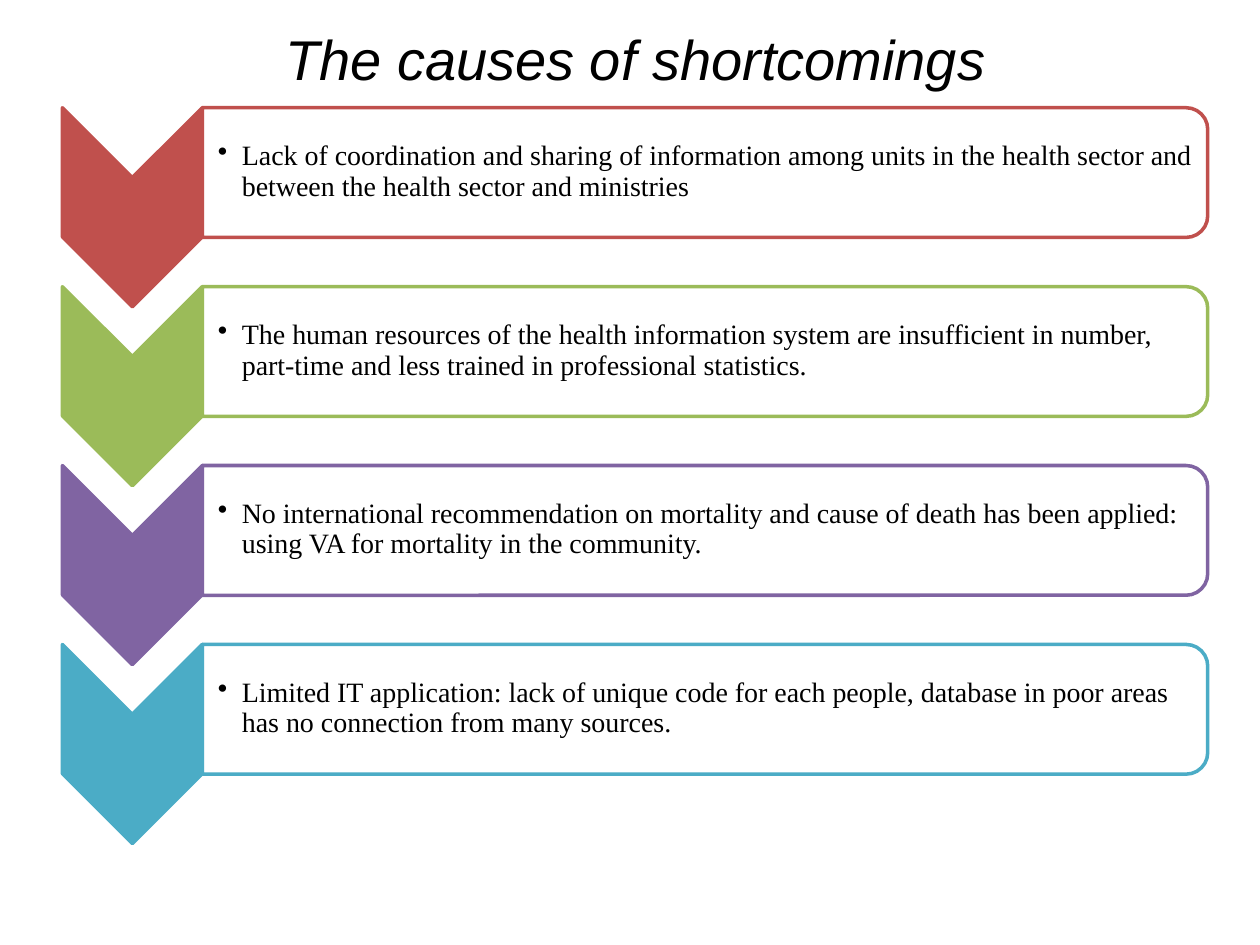
from lxml import etree
from pptx import Presentation
from pptx.dml.color import RGBColor
from pptx.enum.shapes import MSO_SHAPE
from pptx.enum.text import MSO_ANCHOR, PP_ALIGN
from pptx.oxml.ns import qn
from pptx.util import Inches, Pt

CHEVRON = MSO_SHAPE.CHEVRON
ROUNDED_PANEL = MSO_SHAPE.ROUND_2_SAME_RECTANGLE
MIDDLE = MSO_ANCHOR.MIDDLE
LEFT = PP_ALIGN.LEFT
CENTER = PP_ALIGN.CENTER

BLACK = RGBColor(0x00, 0x00, 0x00)
WHITE = RGBColor(0xFF, 0xFF, 0xFF)
RED = RGBColor(0xC0, 0x50, 0x4D)
GREEN = RGBColor(0x9B, 0xBB, 0x59)
PURPLE = RGBColor(0x80, 0x64, 0xA2)
TEAL = RGBColor(0x4B, 0xAC, 0xC6)

CAUSES = [
    (RED, "Lack of coordination and sharing of information among units in the "
          "health sector and between the health sector and ministries"),
    (GREEN, "The human resources of the health information system are insufficient "
            "in number, part-time and less trained in professional statistics."),
    (PURPLE, "No international recommendation on mortality and cause of death has "
             "been applied: using VA for mortality in the community."),
    (TEAL, "Limited IT application: lack of unique code for each people, database "
           "in poor areas has no connection from many sources."),
]
FIRST_TOP = 0.85
ROW_STEP = 1.42


def style_font(font, name, size):
    font.name = name
    font.size = Pt(size)
    font.color.rgb = BLACK


def set_title(slide, text):
    title = slide.shapes.title
    title.left, title.top = Inches(0.42), Inches(0.17)
    title.width, title.height = Inches(9.25), Inches(0.68)
    title.text_frame.text = text
    title.text_frame.vertical_anchor = MIDDLE
    para = title.text_frame.paragraphs[0]
    para.alignment = CENTER
    para.line_spacing = 0.8
    style_font(para.font, "Arial", 32)
    para.font.italic = True


def add_turned_shape(shapes, kind, place, fill, line):
    shape = shapes.add_shape(kind, *map(Inches, place))
    shape.rotation = 90
    shape.shadow.inherit = False
    shape.fill.solid()
    shape.fill.fore_color.rgb = fill
    shape.line.color.rgb = line
    shape.line.width = Pt(2)
    return shape


def set_opacity(shape, percent):
    color = shape.fill._xPr.find(qn("a:solidFill"))[0]
    etree.SubElement(color, qn("a:alpha"), val=str(percent * 1000))


def add_bullet(para):
    properties = para._p.get_or_add_pPr()
    properties.set("marL", str(Inches(0.19)))
    properties.set("indent", str(-Inches(0.19)))
    etree.SubElement(properties, qn("a:buChar"), char="•")


def add_cause_text(shapes, top, text):
    box = shapes.add_textbox(Inches(1.61), Inches(top), Inches(7.93), Inches(0.93))
    frame = box.text_frame
    frame.word_wrap = True
    frame.vertical_anchor = MIDDLE
    frame.margin_left = Inches(0.12)
    frame.margin_top = frame.margin_right = frame.margin_bottom = Inches(0.01)
    frame.text = text
    para = frame.paragraphs[0]
    para.level = 1
    para.alignment = LEFT
    para.line_spacing = 0.9
    para.space_after = Pt(2.4)
    style_font(para.font, "Times New Roman", 16)
    add_bullet(para)


def add_cause(shapes, top, color, text):
    add_turned_shape(shapes, CHEVRON, (0.26, top + 0.24, 1.58, 1.11), color, color)
    panel = add_turned_shape(
        shapes, ROUNDED_PANEL, (5.08, top - 3.47, 1.03, 7.98), WHITE, color)
    set_opacity(panel, 90)
    add_cause_text(shapes, top + 0.05, text)


def main():
    deck = Presentation()
    deck.slide_width, deck.slide_height = Inches(10), Inches(7.5)
    slide = deck.slides.add_slide(deck.slide_layouts[5])
    set_title(slide, "The causes of shortcomings")
    group = slide.shapes.add_group_shape()
    for row, (color, text) in enumerate(CAUSES):
        add_cause(group.shapes, FIRST_TOP + row * ROW_STEP, color, text)
    deck.save("out.pptx")


if __name__ == "__main__":
    main()
